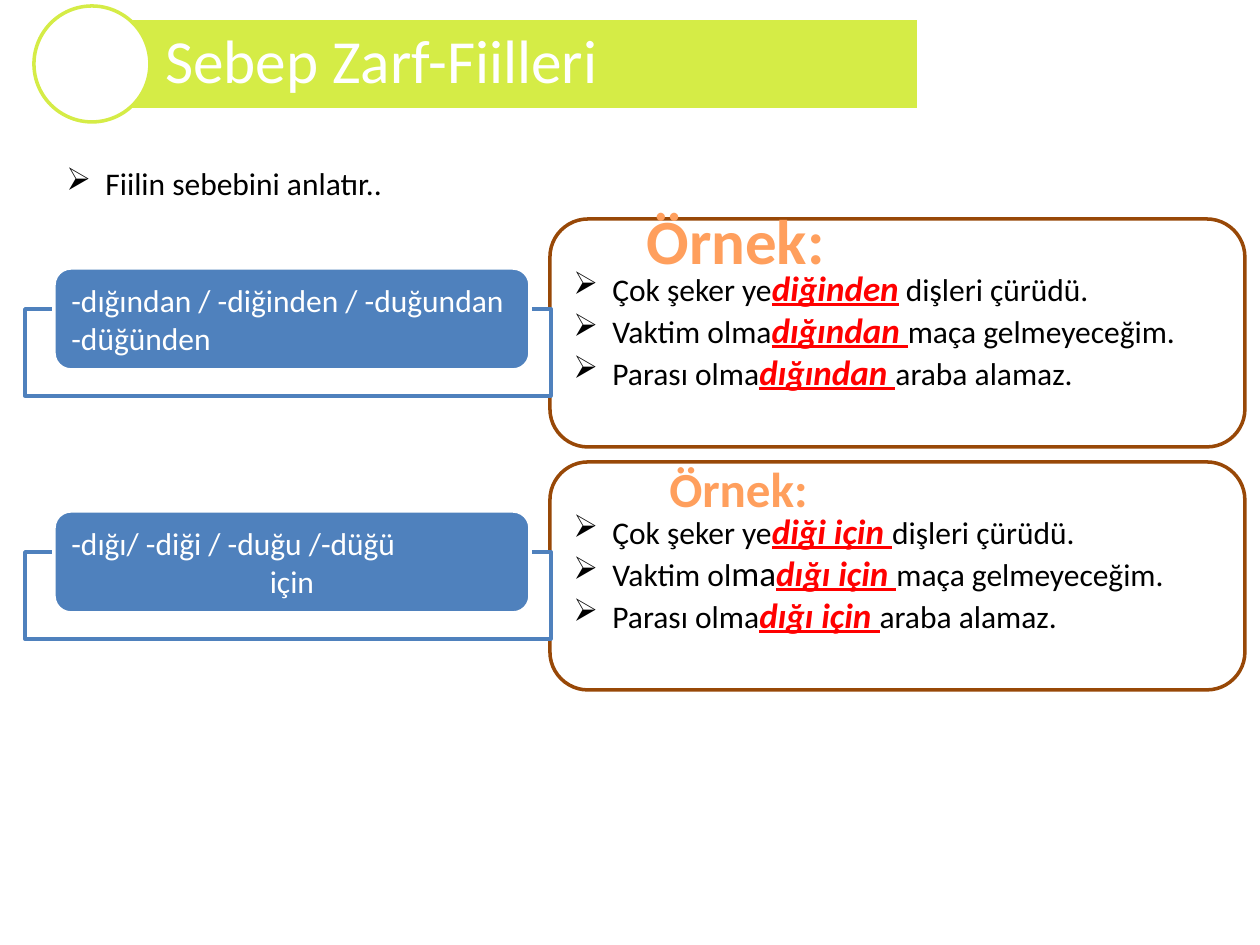
"""Build the slide on Turkish verbal adverbs of reason."""
from pptx import Presentation
from pptx.dml.color import RGBColor
from pptx.enum.shapes import MSO_SHAPE
from pptx.enum.text import MSO_ANCHOR, PP_ALIGN
from pptx.oxml.ns import qn
from pptx.util import Emu, Pt
from lxml import etree

RECT, ROUND, OVAL = MSO_SHAPE.RECTANGLE, MSO_SHAPE.ROUNDED_RECTANGLE, MSO_SHAPE.OVAL
LEFT, CENTER = PP_ALIGN.LEFT, PP_ALIGN.CENTER
TOP, MIDDLE = MSO_ANCHOR.TOP, MSO_ANCHOR.MIDDLE
WHITE, BLACK, RED, LIME = "FFFFFF", "000000", "FF0000", "D5EC46"
BLUE, BROWN, ORANGE = "4F81BD", "984807", "FF9F5D"

PLAIN = {"size": Pt(18), "color": BLACK}
LARGE = {"size": Pt(20), "color": BLACK}
SUFFIX = {"size": Pt(20), "color": RED, "bold": True, "italic": True, "underline": True}
LABEL = {"size": Pt(18), "color": WHITE}
TITLE = {"size": Pt(35), "color": WHITE}

HEADING = "Sebep Zarf-Fiilleri"
DEFINITION = "Fiilin sebebini anlatır.."
ROWS = [
    {
        "suffixes": [("-dığından / -diğinden / -duğundan", LEFT), ("-düğünden", LEFT)],
        "caption": (633, 195, 205, 89), "caption_pt": 36,
        "examples": [
            [("Çok şeker ye", PLAIN), ("diğinden", SUFFIX), (" dişleri çürüdü.", PLAIN)],
            [("Vaktim olma", PLAIN), ("dığından ", SUFFIX), ("maça gelmeyeceğim.", PLAIN)],
            [("Parası olma", PLAIN), ("dığından ", SUFFIX), ("araba alamaz.", PLAIN)],
        ],
    },
    {
        "suffixes": [("-dığı/ -diği / -duğu /-düğü", LEFT), ("için", CENTER)],
        "caption": (656, 452, 165, 72), "caption_pt": 28,
        "examples": [
            [("Çok şeker ye", PLAIN), ("diği için ", SUFFIX), ("dişleri çürüdü.", PLAIN)],
            [("Vaktim ol", PLAIN), ("ma", LARGE), ("dığı için ", SUFFIX),
             ("maça gelmeyeceğim.", PLAIN)],
            [("Parası olma", PLAIN), ("dığı için ", SUFFIX), ("araba alamaz.", PLAIN)],
        ],
    },
]
ROW_TOP, ROW_STEP = 219, 243


def px(n):
    return Emu(round(n * 914400 / 126))


def rgb(color):
    return RGBColor.from_string(color)


def add_box(kind, box, fill, line):
    sp = slide.shapes.add_shape(kind, *map(px, box))
    sp.shadow.inherit = False
    sp.fill.solid()
    sp.fill.fore_color.rgb = rgb(fill)
    sp.line.color.rgb = rgb(line)
    sp.line.width = Pt(2)
    return sp


def add_text(box, paragraphs, **options):
    sp = slide.shapes.add_textbox(*map(px, box))
    write(sp, paragraphs, **options)
    return sp


def write(sp, paragraphs, anchor=TOP, wrap=True, bullet=False):
    tf = sp.text_frame
    tf.word_wrap, tf.vertical_anchor = wrap, anchor
    for i, (runs, align) in enumerate(paragraphs):
        p = tf.add_paragraph() if i else tf.paragraphs[0]
        p.alignment = align
        if bullet:
            pPr = p._p.get_or_add_pPr()
            pPr.set("marL", str(px(39)))
            pPr.set("indent", str(-px(39)))
            etree.SubElement(pPr, qn("a:buChar")).set("char", "➢")
        for text, style in runs:
            r = p.add_run()
            r.text = text
            r.font.name = "Calibri"
            for name, value in style.items():
                if name == "color":
                    r.font.color.rgb = rgb(value)
                else:
                    setattr(r.font, name, value)


def add_row(top, row):
    add_box(ROUND, (550, top, 695, 228), WHITE, BROWN)
    add_text((561, top + 41, 684, 178), [(e, LEFT) for e in row["examples"]], bullet=True)
    add_box(RECT, (25, top + 90, 526, 87), WHITE, BLUE)
    sp = add_box(ROUND, (54, top + 49, 476, 102), BLUE, WHITE)
    write(sp, [([(text, LABEL)], align) for text, align in row["suffixes"]], MIDDLE)
    style = {"size": Pt(row["caption_pt"]), "color": ORANGE, "bold": True}
    add_text(row["caption"], [([("Örnek:", style)], CENTER)], wrap=False)


prs = Presentation()
prs.slide_width, prs.slide_height = px(1260), px(945)
slide = prs.slides.add_slide(prs.slide_layouts[6])

add_text((54, 158, 345, 50), [([(DEFINITION, PLAIN)], LEFT)], wrap=False, bullet=True)
for i, row in enumerate(ROWS):
    add_row(ROW_TOP + i * ROW_STEP, row)

bar = (92, 18, 827, 92)
add_box(RECT, bar, LIME, WHITE)
title = add_text(bar, [([(HEADING, TITLE)], LEFT)], anchor=MIDDLE)
title.text_frame.margin_left = px(73)
title.text_frame.paragraphs[0].line_spacing = 0.9
add_box(OVAL, (34, 6, 116, 116), WHITE, LIME)

prs.save("out.pptx")
